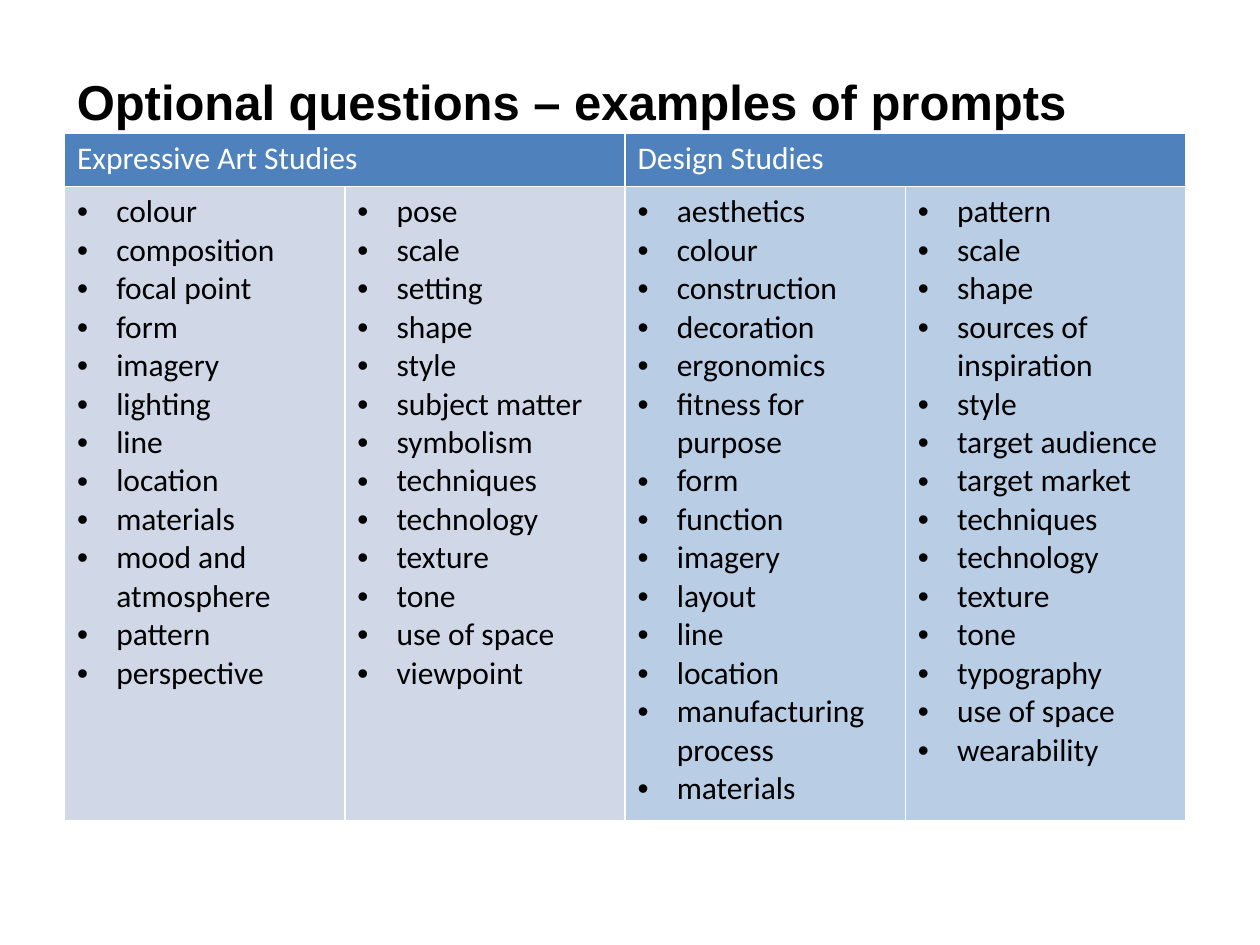
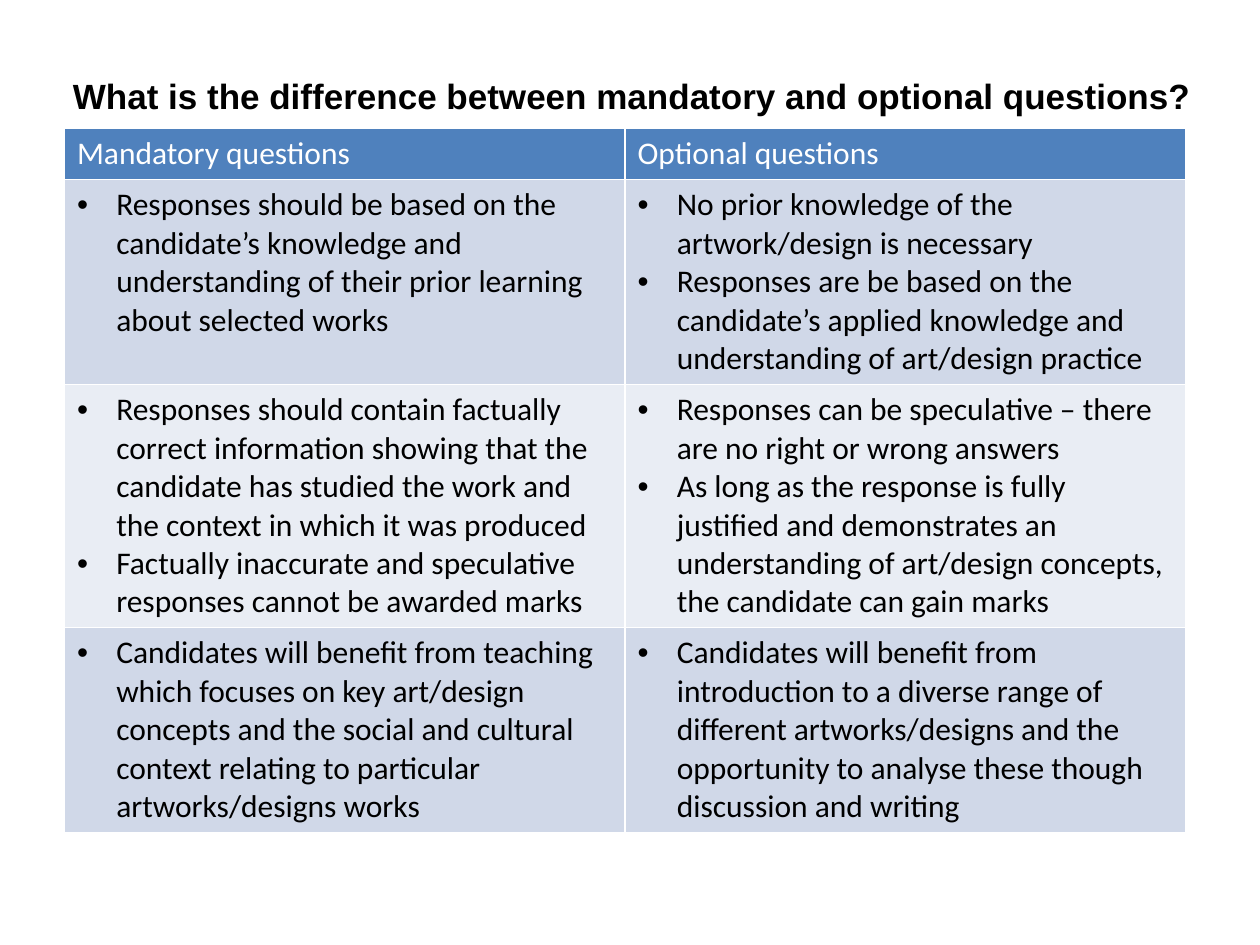
import pptx
import pptx.dml.color
import pptx.enum.text
import pptx.oxml.ns
import pptx.util
from lxml import etree

Cm, Pt = pptx.util.Cm, pptx.util.Pt
RGB = pptx.dml.color.RGBColor

BLACK = RGB(0x00, 0x00, 0x00)
WHITE = RGB(0xFF, 0xFF, 0xFF)
HEAD = RGB(0x4F, 0x81, 0xBD)
PALE = RGB(0xD0, 0xD8, 0xE8)
LIGHT = RGB(0xE9, 0xED, 0xF4)
SKY = RGB(0xB9, 0xCD, 0xE5)

LEFT, WIDTH = 1.3, 22.6
INDENT = 0.79

# Each body row is a list of cells; each cell is a list of bullet points.
PROMPTS = {
    "title": "Optional questions – examples of prompts",
    "size": 28,
    "box": (1.3, 1.24, 22.86, 1.4),
    "top": 2.69,
    "heads": ["Expressive Art Studies", "Design Studies"],
    "rows": [[
        ["colour", "composition", "focal point", "form", "imagery", "lighting",
         "line", "location", "materials", "mood and atmosphere", "pattern",
         "perspective"],
        ["pose", "scale", "setting", "shape", "style", "subject matter",
         "symbolism", "techniques", "technology", "texture", "tone",
         "use of space", "viewpoint"],
        ["aesthetics", "colour", "construction", "decoration", "ergonomics",
         "fitness for purpose", "form", "function", "imagery", "layout",
         "line", "location", "manufacturing process", "materials"],
        ["pattern", "scale", "shape", "sources of inspiration", "style",
         "target audience", "target market", "techniques", "technology",
         "texture", "tone", "typography", "use of space", "wearability"],
    ]],
    "fills": [[PALE, PALE, SKY, SKY]],
    "heights": [1.07, 12.78],
}

CONTRAST = {
    "title": "What is the difference between mandatory and optional questions?",
    "size": 20,
    "box": (1.22, 1.3, 23.39, 1.32),
    "top": 2.59,
    "heads": ["Mandatory questions", "Optional questions"],
    "rows": [
        [["Responses should be based on the candidate’s knowledge and "
          "understanding of their prior learning about selected works"],
         ["No prior knowledge of the artwork/design is necessary",
          "Responses are be based on the candidate’s applied knowledge and "
          "understanding of art/design practice"]],
        [["Responses should contain factually correct information showing "
          "that the candidate has studied the work and the context in which "
          "it was produced",
          "Factually inaccurate and speculative responses cannot be awarded "
          "marks"],
         ["Responses can be speculative – there are no right or wrong answers",
          "As long as the response is fully justified and demonstrates an "
          "understanding of art/design concepts, the candidate can gain "
          "marks"]],
        [["Candidates will benefit from teaching which focuses on key "
          "art/design concepts and the social and cultural context relating "
          "to particular artworks/designs works"],
         ["Candidates will benefit from introduction to a diverse range of "
          "different artworks/designs and the opportunity to analyse these "
          "though discussion and writing"]],
    ],
    "fills": [[PALE] * 2, [LIGHT] * 2, [PALE] * 2],
    "heights": [1.03, 4.13, 4.9, 4.13],
}


def style(para, name, size, color, bold=False):
    font = para.font
    font.name, font.size, font.bold = name, Pt(size), bold
    font.color.rgb = color


def bullet(para):
    props = para._p.get_or_add_pPr()
    props.set("marL", str(Cm(INDENT)))
    props.set("indent", str(-Cm(INDENT)))
    for tag, key, val in (("a:buFont", "typeface", "Arial"),
                          ("a:buChar", "char", "•")):
        etree.SubElement(props, pptx.oxml.ns.qn(tag)).set(key, val)


def fill_cell(cell, lines, fill, color, dots):
    cell.fill.solid()
    cell.fill.fore_color.rgb = fill
    cell.text_frame.text = "\n".join(lines)
    for para in cell.text_frame.paragraphs:
        if dots:
            bullet(para)
        style(para, "Calibri", 18, color)


def add_title(slide, data):
    box = slide.shapes.add_textbox(*map(Cm, data["box"]))
    frame = box.text_frame
    frame.word_wrap = True
    frame.vertical_anchor = pptx.enum.text.MSO_ANCHOR.TOP
    frame.margin_top = Cm(0.21)
    frame.text = data["title"]
    style(frame.paragraphs[0], "Arial", data["size"], BLACK, True)


def add_grid(slide, data):
    heights, heads = data["heights"], data["heads"]
    count = len(data["rows"][0])
    span = count // len(heads)
    grid = slide.shapes.add_table(
        len(heights), count, Cm(LEFT), Cm(data["top"]),
        Cm(WIDTH), Cm(sum(heights))).table
    for row, height in zip(grid.rows, heights):
        row.height = Cm(height)
    for col in grid.columns:
        col.width = Cm(WIDTH / count)
    for num, head in enumerate(heads):
        first = num * span
        if span > 1:
            grid.cell(0, first).merge(grid.cell(0, first + span - 1))
        fill_cell(grid.cell(0, first), [head], HEAD, WHITE, False)
    for r, (cells, fills) in enumerate(zip(data["rows"], data["fills"]), 1):
        for c, (lines, fill) in enumerate(zip(cells, fills)):
            fill_cell(grid.cell(r, c), lines, fill, BLACK, True)


def main():
    deck = pptx.Presentation()
    deck.slide_width, deck.slide_height = Cm(25.4), Cm(19.05)
    for data in (PROMPTS, CONTRAST):
        slide = deck.slides.add_slide(deck.slide_layouts[6])
        add_title(slide, data)
        add_grid(slide, data)
    deck.save("out.pptx")


if __name__ == "__main__":
    main()
